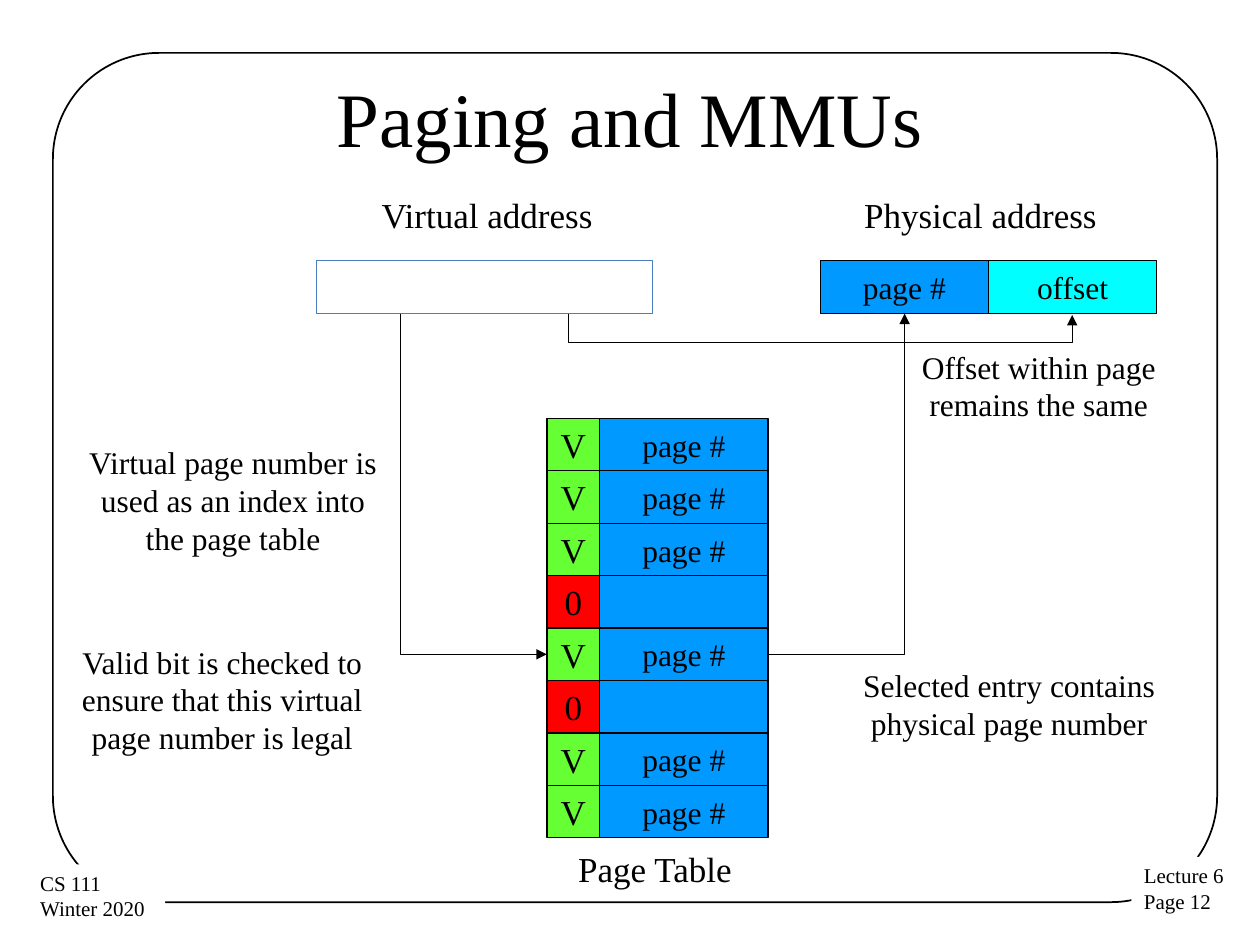
"""Builds the slide that shows how an MMU turns a virtual address into a physical one."""
from lxml.etree import SubElement
from pptx import Presentation
from pptx.dml.color import RGBColor
from pptx.enum.shapes import MSO_CONNECTOR, MSO_SHAPE
from pptx.enum.text import MSO_ANCHOR, MSO_AUTO_SIZE, PP_ALIGN
from pptx.oxml.ns import qn
from pptx.util import Inches, Pt

FONT = "Times New Roman"
COLORS = {
    "black": "000000",
    "white": "FFFFFF",
    "blue": "0099FF",
    "cyan": "00FFFF",
    "green": "66FF33",
    "red": "FF0000",
    "edge": "4B7EBC",
}
BITS = "VVV0V0VV"
TOP = 3.32
ROW = 3.33 / len(BITS)
BIT = 0.42
CELL = 1.335
LEFT = 4.34
ADDR = 2.07
BASE = 2.49


def color(name):
    """Return the named colour."""
    return RGBColor.from_string(COLORS[name])


def write(shape, words, size=18, align=PP_ALIGN.CENTER, anchor=MSO_ANCHOR.TOP,
          wrap=False, grow=False):
    """Put words into a shape, one paragraph for each line."""
    frame = shape.text_frame
    frame.word_wrap = wrap
    frame.vertical_anchor = anchor
    frame.auto_size = MSO_AUTO_SIZE.SHAPE_TO_FIT_TEXT if grow else MSO_AUTO_SIZE.NONE
    frame.text = words
    for para in frame.paragraphs:
        para.alignment = align
        for run in para.runs:
            run.font.name = FONT
            run.font.size = Pt(size)
            run.font.color.rgb = color("black")


def box(slide, x, y, w, h, fill=None, line="black", width=0.75, kind=MSO_SHAPE.RECTANGLE):
    """Add a shape with the given fill and outline."""
    shape = slide.shapes.add_shape(kind, Inches(x), Inches(y), Inches(w), Inches(h))
    shape.shadow.inherit = False
    if fill:
        shape.fill.solid()
        shape.fill.fore_color.rgb = color(fill)
    else:
        shape.fill.background()
    if line:
        shape.line.color.rgb = color(line)
        shape.line.width = Pt(width)
    else:
        shape.line.fill.background()
    return shape


def cell(slide, x, y, w, h, fill, words, size=18):
    """Add a filled box with a centred label."""
    shape = box(slide, x, y, w, h, fill)
    if words:
        write(shape, words, size=size, anchor=MSO_ANCHOR.MIDDLE)


def label(slide, x, y, w, h, words, **style):
    """Add a text box."""
    shape = slide.shapes.add_textbox(Inches(x), Inches(y), Inches(w), Inches(h))
    write(shape, words, **style)


def elbow(slide, x1, y1, x2, y2, turn=False, drop=None):
    """Add a bent arrow that leaves sideways, or downward if turned."""
    ends = (x1, y1, x2, y2)
    if turn:
        midx, midy = (x1 + x2) / 2, (y1 + y2) / 2
        w, h = (y2 - y1) / 2, (x2 - x1) / 2
        ends = (midx + w, midy - h, midx - w, midy + h)
    link = slide.shapes.add_connector(MSO_CONNECTOR.ELBOW, *map(Inches, ends))
    link.line.color.rgb = color("black")
    link.line.width = Pt(0.75)
    props = link._element.spPr
    if turn:
        props.find(qn("a:xfrm")).set("rot", str(270 * 60000))
    geom = props.find(qn("a:prstGeom"))
    if drop:
        ratio = round(drop / (y2 - y1) * 100000)
        guides = geom.find(qn("a:avLst"))
        SubElement(guides, qn("a:gd"), name="adj1", fmla=f"val {ratio}")
    else:
        geom.set("prst", "bentConnector2")
    SubElement(props.find(qn("a:ln")), qn("a:tailEnd"), type="triangle")
    SubElement(props, qn("a:effectLst"))


def frame(slide):
    """Add the rounded border, the corner notes and the title."""
    edge = box(slide, 0.42, 0.42, 9.24, 6.74, width=1, kind=MSO_SHAPE.ROUNDED_RECTANGLE)
    edge.adjustments[0] = 0.125
    for x, y, w, words in ((8.98, 6.8, 0.85, "Lecture 6\nPage 12"),
                           (0.22, 6.86, 1.09, "CS 111\nWinter 2020")):
        note = box(slide, x, y, w, 0.51, "white", None)
        write(note, words, size=12, align=PP_ALIGN.LEFT, grow=True)
    label(slide, 0.5, 0.3, 9, 1.25, "Paging and MMUs", size=44,
          anchor=MSO_ANCHOR.MIDDLE, wrap=True)


def table(slide):
    """Add the page table, one valid bit and one entry a row."""
    for i, bit in enumerate(BITS):
        y = TOP + i * ROW
        valid = bit == "V"
        cell(slide, LEFT + BIT, y, CELL, ROW, "blue", "page #" if valid else "")
        cell(slide, LEFT, y, BIT, ROW, "green" if valid else "red", bit, size=20)


def main():
    """Build and save the slide."""
    deck = Presentation()
    deck.slide_width, deck.slide_height = Inches(10), Inches(7.5)
    slide = deck.slides.add_slide(deck.slide_layouts[6])
    frame(slide)

    box(slide, 2.51, ADDR, 2 * CELL, BIT, "white", "edge")
    cell(slide, 6.51, ADDR, CELL, BIT, "blue", "page #")
    cell(slide, 6.51 + CELL, ADDR, CELL, BIT, "cyan", "offset")
    table(slide)

    for x, y, w, words in ((2.93, 1.49, 1.9, "Virtual address"),
                           (6.76, 1.49, 2.06, "Physical address"),
                           (4.49, 6.68, 1.44, "Page Table")):
        label(slide, x, y, w, 0.44, words, size=20, align=PP_ALIGN.LEFT, grow=True)

    for x, y, w, h, words in (
        (0.6, 3.47, 2.5, 1.01, "Virtual page number is used as an index into the page table"),
        (0.43, 5.05, 2.67, 1.01,
         "Valid bit is checked to ensure that this virtual page number is legal"),
        (6.68, 5.24, 2.66, 0.71, "Selected entry contains physical page number"),
        (6.91, 2.71, 2.67, 0.71, "Offset within page remains the same"),
    ):
        label(slide, x, y, w, h, words, wrap=True, grow=True)

    pick = TOP + 4.5 * ROW
    elbow(slide, 3.18, BASE, LEFT, pick, turn=True)
    elbow(slide, LEFT + BIT + CELL, pick, 7.18, BASE)
    elbow(slide, 4.51, BASE, 8.51, BASE + 0.01, turn=True, drop=0.23)
    deck.save("out.pptx")


if __name__ == "__main__":
    main()
